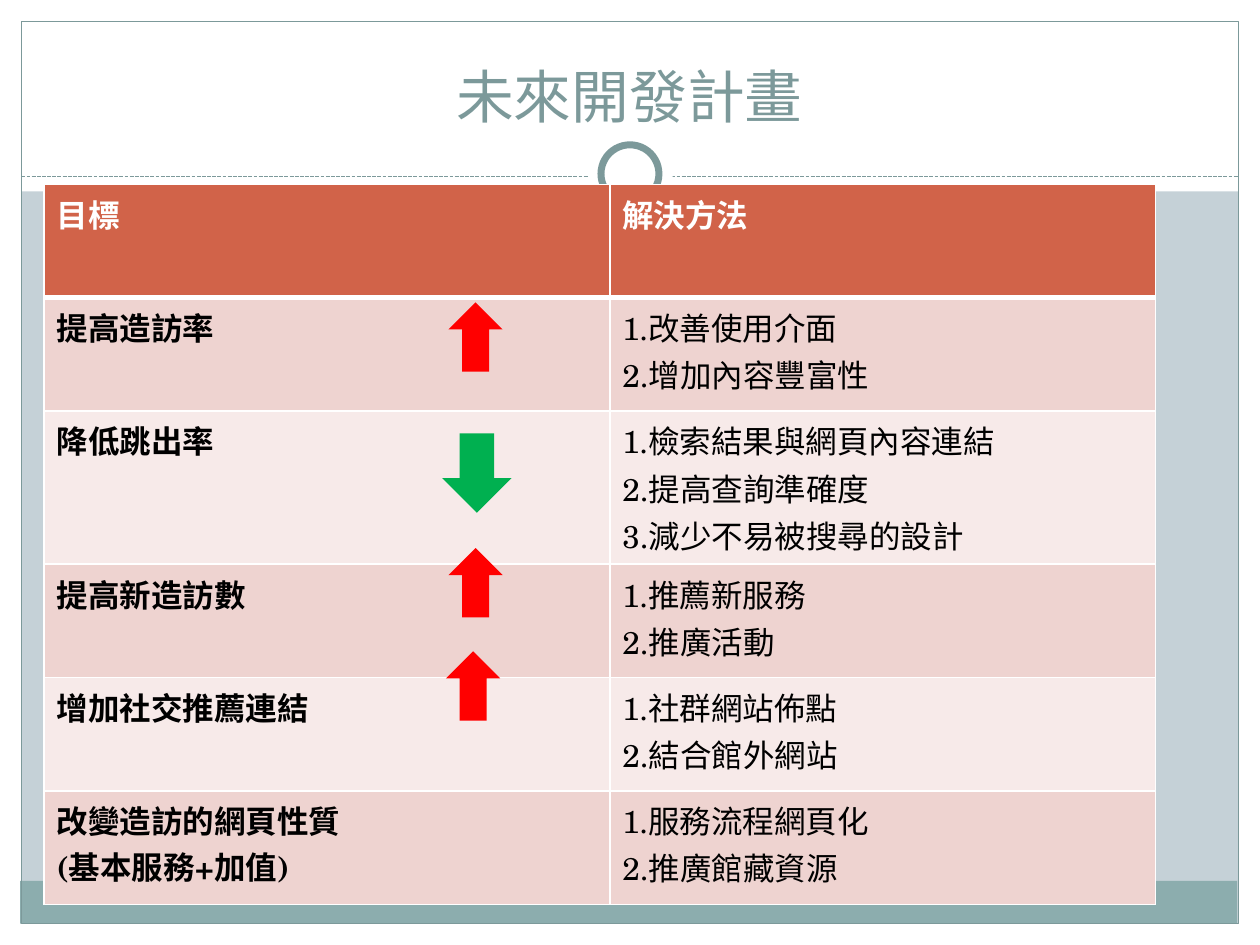
from lxml.etree import SubElement
from pptx import Presentation
from pptx.dml.color import RGBColor
from pptx.enum.dml import MSO_LINE
from pptx.enum.shapes import MSO_CONNECTOR, MSO_SHAPE as SHP
from pptx.enum.text import MSO_ANCHOR, PP_ALIGN
from pptx.oxml.ns import qn
from pptx.util import Inches, Pt

FONT = "TeX Gyre Schola"
WHITE, TEAL, HEADER = "FFFFFF", "7C999A", "D16349"
BANDS = ["F7EAE9", "EED3D0"]
RED, GREEN = "FF0000", "00B050"

prs = Presentation()
prs.slide_width, prs.slide_height = Inches(10), Inches(7.5)
W, H = prs.slide_width / 100, prs.slide_height / 100
s = prs.slides.add_slide(prs.slide_layouts[6])


def paint(fmt, color):
    fmt.solid()
    fmt.fore_color.rgb = RGBColor.from_string(color)


def add_run(p, text, size, color, bold=False):
    r = p.add_run()
    r.text = text
    r.font.name, r.font.size, r.font.bold = FONT, Pt(size), bold
    r.font.color.rgb = RGBColor.from_string(color)


paint(s.background.fill, "C5D1D7")

shapes = [
    (SHP.RECTANGLE, 0, 97.73, 100, 2.27, WHITE, 0),
    (SHP.RECTANGLE, 0, 0, 100, 20.27, WHITE, 0),
    (SHP.RECTANGLE, 0, 0, 1.7, 100, WHITE, 0),
    (SHP.RECTANGLE, 98.3, 0, 1.7, 100, WHITE, 0),
    (SHP.RECTANGLE, 1.6, 93.2, 96.6, 4.53, "8CADAE", 0),
    (SHP.RECTANGLE, 1.7, 2.27, 96.6, 95.47, None, 0.75),
    ("dashes", 1.7, 18.67, 96.6, 0, None, 0.75),
    (SHP.OVAL, 46.7, 14, 6.7, 8.93, WHITE, 0),
    (SHP.OVAL, 47.7, 15.33, 4.6, 6.13, WHITE, 4),
    ("title", 3.3, 3.33, 93.3, 11.07, None, 0),
    ("table", 3.5, 19.5, 88.2, 76.2, None, 0),
    (SHP.DOWN_ARROW, 35.1, 45.87, 5.5, 8.4, GREEN, 0),
    (SHP.UP_ARROW, 35.6, 32, 4.3, 7.33, RED, 0),
    (SHP.UP_ARROW, 35.6, 58, 4.3, 7.33, RED, 0),
    (SHP.UP_ARROW, 35.4, 68.93, 4.3, 7.33, RED, 0),
]

rows = [
    ("目標", ["解決方法"]),
    ("提高造訪率", ["1.改善使用介面", "2.增加內容豐富性"]),
    ("降低跳出率", ["1.檢索結果與網頁內容連結", "2.提高查詢準確度", "3.減少不易被搜尋的設計"]),
    ("提高新造訪數", ["1.推薦新服務", "2.推廣活動"]),
    ("增加社交推薦連結", ["1.社群網站佈點", "2.結合館外網站"]),
    ("改變造訪的網頁性質\n(基本服務+加值)", ["1.服務流程網頁化", "2.推廣館藏資源"]),
]

for kind, x, y, w, h, fill, line in shapes:
    box = [round(v) for v in (x * W, y * H, w * W, h * H)]
    if kind == "title":
        tf = s.shapes.add_textbox(*box).text_frame
        tf.word_wrap, tf.vertical_anchor = True, MSO_ANCHOR.BOTTOM
        p = tf.paragraphs[0]
        p.alignment = PP_ALIGN.CENTER
        add_run(p, "未來開發計畫", 33, TEAL)
        continue
    if kind == "table":
        tbl = s.shapes.add_table(len(rows), 2, *box).table
        tbl.columns[0].width, tbl.columns[1].width = round(44.9 * W), round(43.3 * W)
        continue
    if kind == "dashes":
        left, top, width, _ = box
        sp = s.shapes.add_connector(MSO_CONNECTOR.STRAIGHT, left, top, left + width, top)
        sp.line.dash_style = MSO_LINE.SQUARE_DOT
        SubElement(sp._element.spPr, qn("a:effectLst"))
    else:
        sp = s.shapes.add_shape(kind, *box)
        sp.shadow.inherit = False
        if fill:
            paint(sp.fill, fill)
        else:
            sp.fill.background()
    if line:
        paint(sp.line.fill, TEAL)
        sp.line.width = Pt(line)
    else:
        sp.line.fill.background()

for i, (goal, steps) in enumerate(rows):
    tbl.rows[i].height = round((16.2 if len(steps) > 2 else 12) * H)
    for j, lines in enumerate([[goal], steps]):
        cell = tbl.cell(i, j)
        for k, text in enumerate(lines):
            tf = cell.text_frame
            p = tf.add_paragraph() if k else tf.paragraphs[0]
            for n, part in enumerate(text.split("\n")):
                if n:
                    p.add_line_break()
                add_run(p, part, 18, "000000" if i else WHITE, i == 0 or j == 0)
        tcPr = cell._tc.get_or_add_tcPr()
        for side in "LRTB":
            thick = (i == 0 and side == "B") or (i == 1 and side == "T")
            ln = SubElement(tcPr, qn(f"a:ln{side}"), w=str(Pt(3 if thick else 1)))
            SubElement(SubElement(ln, qn("a:solidFill")), qn("a:srgbClr"), val=WHITE)
        paint(cell.fill, BANDS[i % 2] if i else HEADER)

prs.save("out.pptx")
